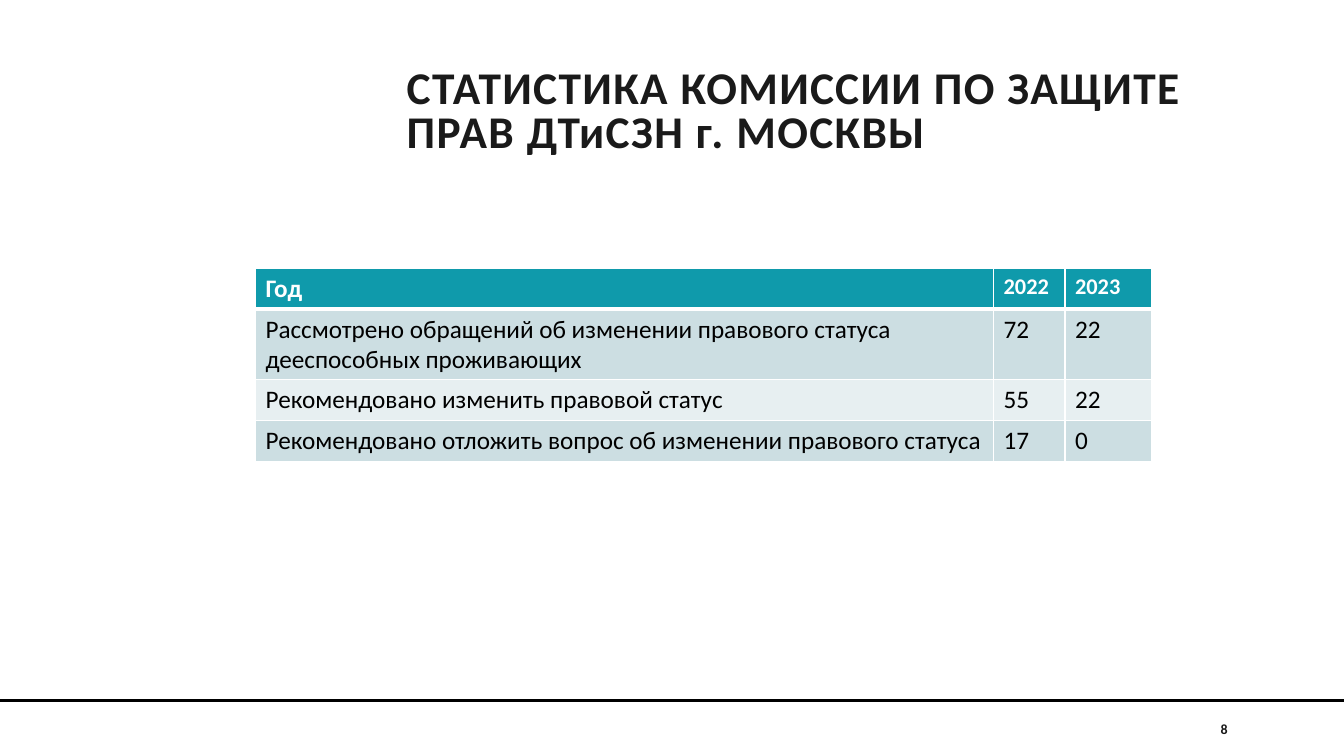
from lxml import etree
from pptx import Presentation
from pptx.dml.color import RGBColor
from pptx.enum.shapes import MSO_CONNECTOR
from pptx.enum.text import MSO_ANCHOR, PP_ALIGN
from pptx.oxml.ns import qn
from pptx.util import Cm, Pt

STRAIGHT = MSO_CONNECTOR.STRAIGHT
TOP, MIDDLE = MSO_ANCHOR.TOP, MSO_ANCHOR.MIDDLE
LEFT, RIGHT = PP_ALIGN.LEFT, PP_ALIGN.RIGHT

# Content
TITLE = "СТАТИСТИКА КОМИССИИ ПО ЗАЩИТЕ ПРАВ ДТиСЗН г. МОСКВЫ"
PAGE_NUMBER = "8"
ROWS = [
    ("Год", "2022", "2023"),
    ("Рассмотрено обращений об изменении правового статуса дееспособных проживающих", "72", "22"),
    ("Рекомендовано изменить правовой статус", "55", "22"),
    ("Рекомендовано отложить вопрос об изменении правового статуса", "17", "0"),
]

# Look and measures in centimetres
FONT = "Calibri"
INK, BLACK, WHITE = "1A1A1A", "000000", "FFFFFF"
HEADER_FILL, BAND_FILLS = "0F9AAB", ("E7EFF1", "CCDEE2")
PAGE_WIDTH, PAGE_HEIGHT = 33.87, 19.05
COLUMN_WIDTHS = (18.6, 1.8, 2.17)
ROW_HEIGHTS = (1.03, 1.78, 1.03, 1.03)
TABLE_LEFT, TABLE_TOP = 6.44, 6.76
RULE_TOP = 17.65


def color(value):
    return RGBColor.from_string(value)


def write(frame, text, size=18, ink=BLACK, bold=False, align=LEFT, line_spacing=None, tracking=None):
    frame.word_wrap = True
    para = frame.paragraphs[0]
    para.alignment = align
    if line_spacing:
        para.line_spacing = line_spacing
    span = para.add_run()
    span.text = text
    span.font.name, span.font.size, span.font.bold = FONT, Pt(size), bold
    span.font.color.rgb = color(ink)
    if tracking:
        span.font._element.set("spc", str(tracking))


def add_text(page, text, left, top, width, height, anchor=TOP, **look):
    box = page.shapes.add_textbox(Cm(left), Cm(top), Cm(width), Cm(height))
    box.text_frame.vertical_anchor = anchor
    write(box.text_frame, text, **look)


def add_borders(cell, widths):
    properties = cell._tc.get_or_add_tcPr()
    for position, (side, points) in enumerate(widths.items()):
        border = etree.Element(qn(f"a:ln{side}"), w=str(Pt(points)))
        fill = etree.SubElement(border, qn("a:solidFill"))
        etree.SubElement(fill, qn("a:srgbClr"), val=WHITE)
        properties.insert(position, border)


def add_statistics(page):
    table = page.shapes.add_table(
        len(ROWS), len(COLUMN_WIDTHS), Cm(TABLE_LEFT), Cm(TABLE_TOP),
        Cm(sum(COLUMN_WIDTHS)), Cm(sum(ROW_HEIGHTS))).table
    for column, width in zip(table.columns, COLUMN_WIDTHS):
        column.width = Cm(width)
    for row_index, values in enumerate(ROWS):
        table.rows[row_index].height = Cm(ROW_HEIGHTS[row_index])
        header = row_index == 0
        for column_index, value in enumerate(values):
            cell = table.cell(row_index, column_index)
            cell.fill.solid()
            cell.fill.fore_color.rgb = color(HEADER_FILL if header else BAND_FILLS[row_index % 2])
            add_borders(cell, {"L": 1, "R": 1, "T": 3 if row_index == 1 else 1, "B": 3 if header else 1})
            write(cell.text_frame, value, size=16 if header and column_index else 18,
                  ink=WHITE if header else BLACK, bold=header)


def main():
    deck = Presentation()
    deck.slide_width, deck.slide_height = Cm(PAGE_WIDTH), Cm(PAGE_HEIGHT)
    page = deck.slides.add_slide(deck.slide_layouts[6])

    # Footer rule and page number
    rule = page.shapes.add_connector(STRAIGHT, 0, Cm(RULE_TOP), Cm(PAGE_WIDTH), Cm(RULE_TOP))
    rule.line.color.rgb = color(BLACK)
    rule.line.width = Pt(2.5)
    etree.SubElement(rule._element.spPr, qn("a:effectLst"))
    add_text(page, PAGE_NUMBER, 28.5, 17.98, 2.69, 0.76, anchor=MIDDLE,
             size=10, ink=INK, bold=True, align=RIGHT)

    # Title and table
    add_text(page, TITLE, 10, 1.63, 21, 2.26, size=32.4, ink=INK, bold=True,
             line_spacing=0.8, tracking=100)
    add_statistics(page)
    deck.save("out.pptx")


if __name__ == "__main__":
    main()
